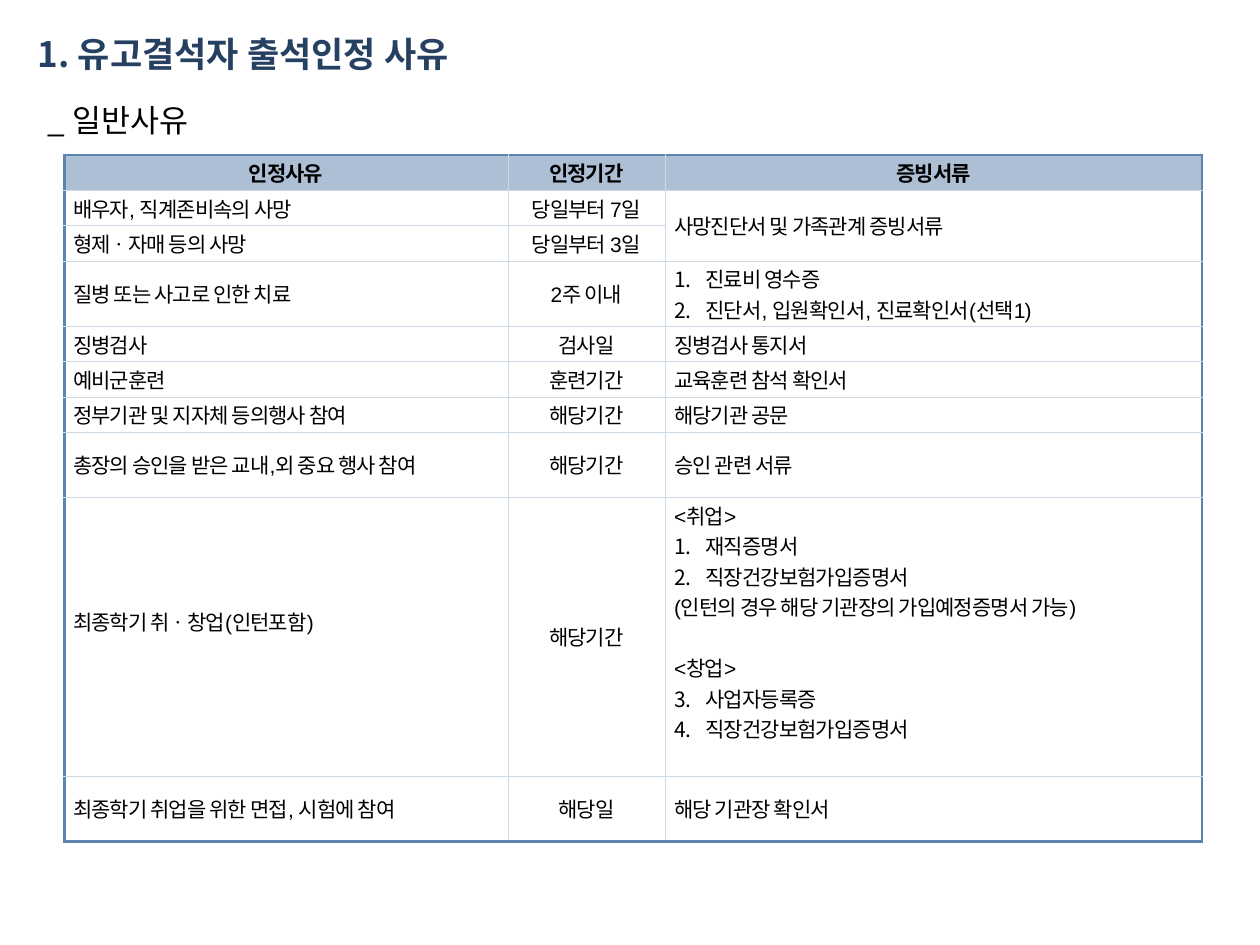
from dataclasses import dataclass

from lxml.etree import SubElement
from pptx import Presentation
from pptx.dml.color import RGBColor
from pptx.enum.text import MSO_ANCHOR, MSO_AUTO_SIZE, PP_ALIGN
from pptx.oxml.ns import qn
from pptx.util import Inches, Pt

COLORS = {"navy": "254061", "ink": "000000", "head": "ADBFD5",
          "white": "FFFFFF", "frame": "5D83B0", "rule": "CDD8E5"}
FONT = "Noto Sans CJK KR"
COLS, ROWS = 100, 75
WIDTHS = (35.2, 12.5, 42.6)
LINE, PAIR, TALL = 2.8, 5.2, 22.1


@dataclass
class Item:
    text: str
    start: int = 0
    gap: float = 0


@dataclass
class Row:
    high: float
    cause: str
    term: str
    proof: tuple[Item, ...] = ()
    foot: float = 0.2


@dataclass
class Label:
    text: str
    box: tuple[float, float, float, float]
    size: int
    color: str
    bold: bool = False


HEAD = Row(LINE, "인정사유", "인정기간", (Item("증빙서류"),))
BODY = (
    Row(LINE, "배우자, 직계존비속의 사망", "당일부터 7일",
        (Item("사망진단서 및 가족관계 증빙서류"),)),
    Row(LINE, "형제ㆍ자매 등의 사망", "당일부터 3일"),
    Row(PAIR, "질병 또는 사고로 인한 치료", "2주 이내",
        (Item("진료비 영수증", 1),
         Item("진단서, 입원확인서, 진료확인서(선택1)", 1))),
    Row(LINE, "징병검사", "검사일", (Item("징병검사 통지서"),)),
    Row(LINE, "예비군훈련", "훈련기간", (Item("교육훈련 참석 확인서"),)),
    Row(LINE, "정부기관 및 지자체 등의행사 참여", "해당기간",
        (Item("해당기관 공문"),)),
    Row(PAIR, "총장의 승인을 받은 교내,외 중요 행사 참여", "해당기간",
        (Item("승인 관련 서류"),)),
    Row(TALL, "최종학기 취ㆍ창업(인턴포함)", "해당기간",
        (Item("<취업>"),
         Item("재직증명서", 1),
         Item("직장건강보험가입증명서", 1),
         Item("(인턴의 경우 해당 기관장의 가입예정증명서 가능)"),
         Item("<창업>", gap=17.5),
         Item("사업자등록증", 3),
         Item("직장건강보험가입증명서", 3)), foot=2.6),
    Row(PAIR, "최종학기 취업을 위한 면접, 시험에 참여", "해당일",
        (Item("해당 기관장 확인서"),)),
)
TITLE = Label("1. 유고결석자 출석인정 사유", (2, 2.1, 38.2, 4.4), 20, "navy", True)
SUB = Label("_ 일반사유", (2.8, 7.5, 14.1, 4), 18, "ink")


def unit(count: float) -> int:
    return Inches(10 * count / COLS)


def style(run, size: int, color: str, bold: bool, face: str) -> None:
    run.font.size = Pt(size)
    run.font.bold = bold
    run.font.name = face
    run.font.color.rgb = RGBColor.from_string(COLORS[color])
    SubElement(run.font._element, qn("a:ea"), typeface=FONT)


def write(shape, label: Label) -> None:
    shape.left, shape.top, shape.width, shape.height = map(unit, label.box)
    frame = shape.text_frame
    frame.text = label.text
    frame.word_wrap = False
    frame.auto_size = MSO_AUTO_SIZE.SHAPE_TO_FIT_TEXT
    frame.vertical_anchor = MSO_ANCHOR.TOP
    para = frame.paragraphs[0]
    para.alignment = PP_ALIGN.LEFT
    style(para.runs[0], label.size, label.color, label.bold, FONT)


def number(para, start: int) -> None:
    props = para._p.get_or_add_pPr()
    props.set("marL", str(Inches(0.25)))
    props.set("indent", str(-Inches(0.25)))
    SubElement(props, qn("a:buFont"), typeface=FONT)
    mark = SubElement(props, qn("a:buAutoNum"), type="arabicPeriod")
    if start > 1:
        mark.set("startAt", str(start))


def edge(cell, side: str, outer: bool) -> None:
    line = SubElement(cell._tc.get_or_add_tcPr(), qn(f"a:ln{side}"),
                      w=str(Pt(1.7 if outer else 0.28)))
    fill = SubElement(line, qn("a:solidFill"))
    SubElement(fill, qn("a:srgbClr"), val=COLORS["frame" if outer else "rule"])


def paint(cell, row: int, col: int) -> None:
    sides = {"L": col == 0, "R": col == len(WIDTHS) - 1,
             "T": row == 0, "B": row == len(BODY)}
    for side, outer in sides.items():
        edge(cell, side, outer)
    cell.fill.solid()
    tint = "white" if row else "head"
    cell.fill.fore_color.rgb = RGBColor.from_string(COLORS[tint])


def fill(cell, items: tuple[Item, ...], align, bold: bool, foot: float) -> None:
    cell.vertical_anchor = MSO_ANCHOR.MIDDLE
    cell.margin_left = cell.margin_right = unit(0.7)
    cell.margin_top, cell.margin_bottom = unit(0.2), unit(foot)
    frame = cell.text_frame
    frame.text = "\n".join(item.text for item in items)
    for para, item in zip(frame.paragraphs, items):
        para.alignment = align
        if item.gap:
            para.space_before = Pt(item.gap)
        if item.start:
            number(para, item.start)
        for run in para.runs:
            style(run, 12, "ink", bold, "Arial")
            run.font._element.set("spc", "-50")


def grid(slide) -> None:
    rows = (HEAD, *BODY)
    high = sum(row.high for row in rows)
    table = slide.shapes.add_table(
        len(rows), len(WIDTHS), unit(5.1), unit(12.3),
        unit(sum(WIDTHS)), unit(high)).table
    table.first_row = table.horz_banding = False
    for col, wide in enumerate(WIDTHS):
        table.columns[col].width = unit(wide)
    for r, row in enumerate(rows):
        table.rows[r].height = unit(row.high)
        side = PP_ALIGN.JUSTIFY if r else PP_ALIGN.CENTER
        parts = (((Item(row.cause),), side, row.foot),
                 ((Item(row.term),), PP_ALIGN.CENTER, 0.2),
                 (row.proof, side, row.foot))
        for c, (items, align, foot) in enumerate(parts):
            cell = table.cell(r, c)
            paint(cell, r, c)
            fill(cell, items, align, r == 0, foot)
        if not row.proof:
            table.cell(r - 1, 2).merge(table.cell(r, 2))


def main() -> None:
    deck = Presentation()
    deck.slide_width, deck.slide_height = unit(COLS), unit(ROWS)
    slide = deck.slides.add_slide(deck.slide_layouts[5])
    write(slide.shapes.title, TITLE)
    grid(slide)
    write(slide.shapes.add_textbox(*map(unit, SUB.box)), SUB)
    deck.save("out.pptx")


if __name__ == "__main__":
    main()
